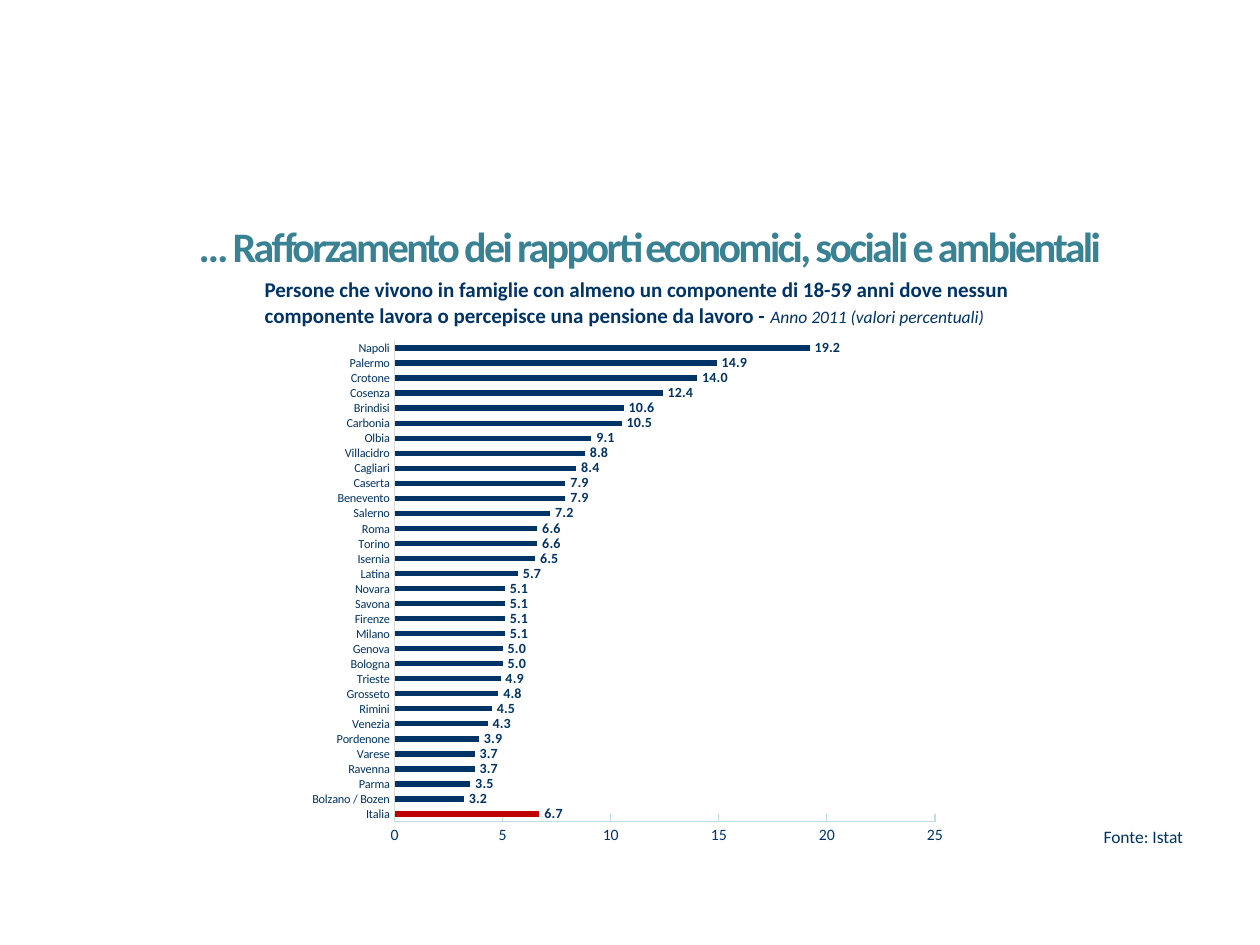
from dataclasses import dataclass

from lxml import etree
from pptx import Presentation
from pptx.chart.data import CategoryChartData
from pptx.dml.color import RGBColor
from pptx.enum.chart import XL_CHART_TYPE, XL_LABEL_POSITION, XL_TICK_MARK
from pptx.enum.text import MSO_ANCHOR, PP_ALIGN
from pptx.oxml.ns import qn
from pptx.util import Inches, Pt

BAR_CLUSTERED = XL_CHART_TYPE.BAR_CLUSTERED
OUTSIDE_END = XL_LABEL_POSITION.OUTSIDE_END
TICK_NONE, TICK_INSIDE = XL_TICK_MARK.NONE, XL_TICK_MARK.INSIDE
LEFT, CENTER = PP_ALIGN.LEFT, PP_ALIGN.CENTER
BOTTOM = MSO_ANCHOR.BOTTOM

TITLE = "… Rafforzamento dei rapporti economici, sociali e ambientali"
SUBTITLE = (
    "Persone che vivono in famiglie con almeno un componente di 18-59 anni "
    "dove nessun componente lavora o percepisce una pensione da lavoro - "
)
SUBTITLE_NOTE = "Anno 2011 (valori percentuali)"
SOURCE = "Fonte: Istat"
SHARES = [
    ("Italia", 6.7), ("Bolzano / Bozen", 3.2), ("Parma", 3.5), ("Ravenna", 3.7),
    ("Varese", 3.7), ("Pordenone", 3.9), ("Venezia", 4.3), ("Rimini", 4.5),
    ("Grosseto", 4.8), ("Trieste", 4.9), ("Bologna", 5.0), ("Genova", 5.0),
    ("Milano", 5.1), ("Firenze", 5.1), ("Savona", 5.1), ("Novara", 5.1),
    ("Latina", 5.7), ("Isernia", 6.5), ("Torino", 6.6), ("Roma", 6.6),
    ("Salerno", 7.2), ("Benevento", 7.9), ("Caserta", 7.9), ("Cagliari", 8.4),
    ("Villacidro", 8.8), ("Olbia", 9.1), ("Carbonia", 10.5), ("Brindisi", 10.6),
    ("Cosenza", 12.4), ("Crotone", 14.0), ("Palermo", 14.9), ("Napoli", 19.2),
]
HIGHLIGHT = "Italia"
PLOT_AREA = {"x": 0.14, "y": 0.02, "w": 0.82, "h": 0.92}


@dataclass(frozen=True)
class Theme:
    font: str = "Calibri"
    teal: str = "388294"
    navy: str = "003366"
    red: str = "C00000"
    grey: str = "D9D9D9"
    pale: str = "BBE0E3"
    title: int = 24
    subtitle: int = 12
    body: int = 10
    axis: int = 9
    label: int = 8
    category: int = 7


THEME = Theme()


def style_font(font, size, color=THEME.navy, bold=False, italic=False):
    font.name = THEME.font
    font.size = Pt(size)
    font.color.rgb = RGBColor.from_string(color)
    font.bold = bold
    font.italic = italic


def add_span(para, text, size, **style):
    span = para.add_run()
    span.text = text
    style_font(span.font, size, **style)
    return span


def add_text(page, place, text, size, align=LEFT, **style):
    box = page.shapes.add_textbox(*map(Inches, place))
    box.text_frame.word_wrap = True
    para = box.text_frame.paragraphs[0]
    para.alignment = align
    return add_span(para, text, size, **style)


def add_subtitle(page):
    frame = page.shapes.add_table(1, 1, *map(Inches, (2.09, 2.17, 6.38, 0.44)))
    frame.table.first_row = False
    frame.table.horz_banding = False
    cell = frame.table.cell(0, 0)
    cell.fill.background()
    cell.vertical_anchor = BOTTOM
    cell.margin_left = cell.margin_right = cell.margin_top = Inches(0.01)
    cell.margin_bottom = 0
    properties = cell._tc.get_or_add_tcPr()
    for index, side in enumerate(("lnL", "lnR", "lnT", "lnB")):
        border = etree.Element(qn(f"a:{side}"))
        etree.SubElement(border, qn("a:noFill"))
        properties.insert(index, border)
    para = cell.text_frame.paragraphs[0]
    add_span(para, SUBTITLE, THEME.subtitle, bold=True)
    add_span(para, SUBTITLE_NOTE, THEME.body, italic=True)


def style_axis(axis, size, tick, line_color):
    axis.has_major_gridlines = False
    axis.major_tick_mark = tick
    axis.minor_tick_mark = TICK_NONE
    axis.format.line.color.rgb = RGBColor.from_string(line_color)
    axis.format.line.width = Pt(0.75)
    style_font(axis.tick_labels.font, size)


def set_plot_area(chart):
    area = chart._chartSpace.chart.plotArea
    for old in area.findall(qn("c:layout")):
        area.remove(old)
    layout = etree.Element(qn("c:layout"))
    manual = etree.SubElement(layout, qn("c:manualLayout"))
    settings = {"layoutTarget": "inner", "xMode": "edge", "yMode": "edge", **PLOT_AREA}
    for name, value in settings.items():
        etree.SubElement(manual, qn(f"c:{name}")).set("val", str(value))
    area.insert(0, layout)


def add_share_chart(page):
    cities, values = zip(*SHARES)
    data = CategoryChartData()
    data.categories = cities
    data.add_series("Series 1", values)
    place = map(Inches, (2.4, 2.62, 5.23, 4.15))
    chart = page.shapes.add_chart(BAR_CLUSTERED, *place, data).chart
    chart.has_legend = False
    chart.has_title = False
    style_font(chart.font, THEME.body)
    style_axis(chart.category_axis, THEME.category, TICK_NONE, THEME.grey)
    style_axis(chart.value_axis, THEME.axis, TICK_INSIDE, THEME.pale)
    chart.value_axis.minimum_scale = 0
    chart.value_axis.maximum_scale = 25
    chart.value_axis.major_unit = 5
    chart.value_axis.tick_labels.number_format = "#,##0"
    chart.value_axis.tick_labels.number_format_is_linked = False
    set_plot_area(chart)

    plot = chart.plots[0]
    plot.gap_width = 182
    plot.vary_by_categories = False
    bars = plot.series[0]
    bars.invert_if_negative = False
    highlight = bars.points[cities.index(HIGHLIGHT)]
    for part, color in ((bars, THEME.navy), (highlight, THEME.red)):
        part.format.fill.solid()
        part.format.fill.fore_color.rgb = RGBColor.from_string(color)
    labels = bars.data_labels
    labels.show_value = True
    labels.position = OUTSIDE_END
    labels.number_format = "#,##0.0"
    labels.number_format_is_linked = False
    style_font(labels.font, THEME.label, bold=True)


def main():
    deck = Presentation()
    deck.slide_width, deck.slide_height = Inches(10), Inches(7.5)
    page = deck.slides.add_slide(deck.slide_layouts[6])
    title = add_text(page, (0.59, 1.7, 9.13, 0.5), TITLE, THEME.title,
                     align=CENTER, color=THEME.teal, bold=True)
    title.font._element.set("spc", "-150")
    add_subtitle(page)
    add_text(page, (8.66, 6.51, 1.22, 0.27), SOURCE, THEME.body)
    add_share_chart(page)
    deck.save("out.pptx")


if __name__ == "__main__":
    main()
